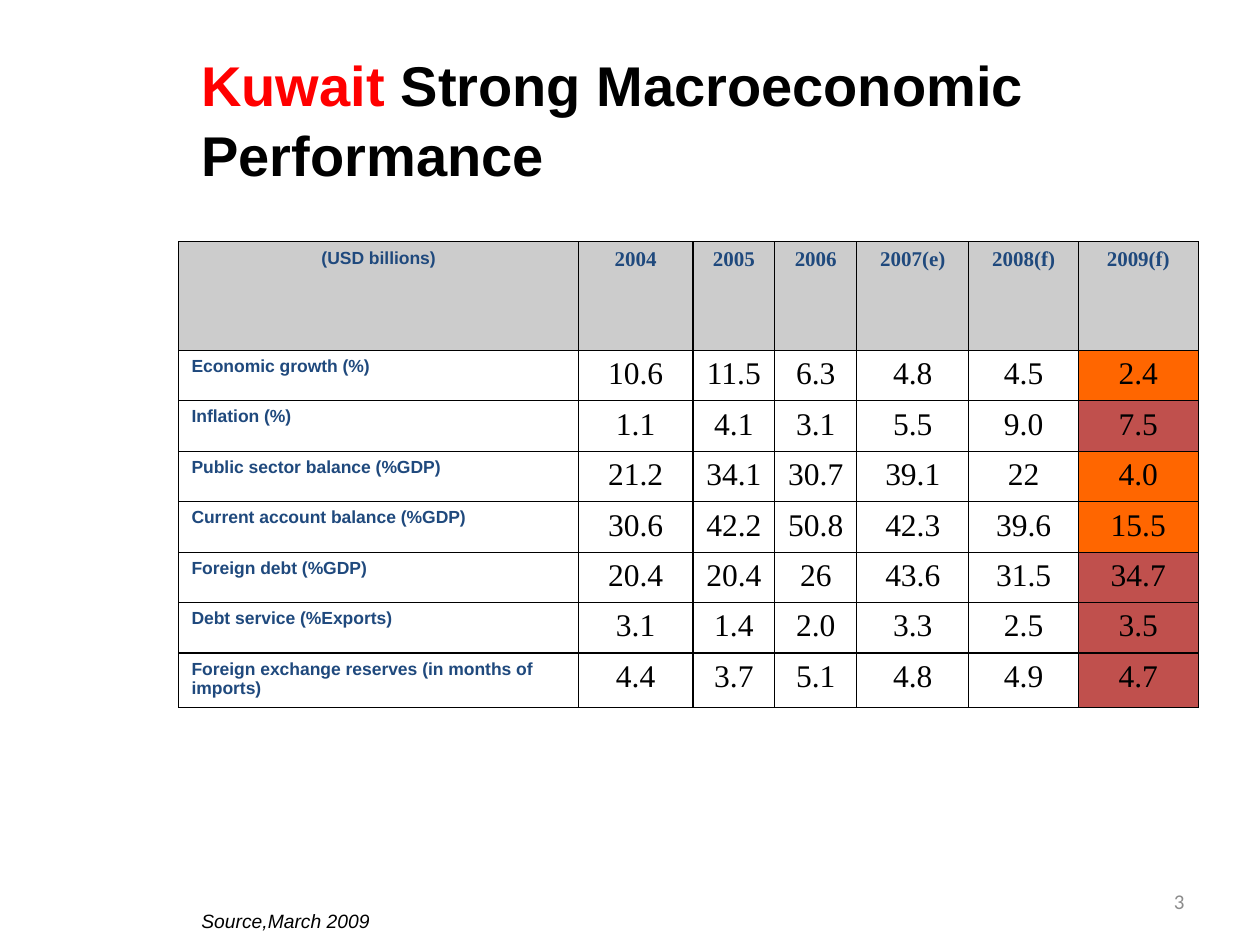
from lxml import etree
from pptx import Presentation
from pptx.dml.color import RGBColor
from pptx.enum.text import MSO_ANCHOR, PP_ALIGN
from pptx.oxml.ns import qn
from pptx.util import Inches, Pt

LEFT, CENTER, RIGHT = PP_ALIGN.LEFT, PP_ALIGN.CENTER, PP_ALIGN.RIGHT
MIDDLE = MSO_ANCHOR.MIDDLE
BLACK = RGBColor(0x00, 0x00, 0x00)
WHITE = RGBColor(0xFF, 0xFF, 0xFF)
RED = RGBColor(0xFF, 0x00, 0x00)
NAVY = RGBColor(0x1F, 0x49, 0x7D)
SILVER = RGBColor(0xCC, 0xCC, 0xCC)
GRAY = RGBColor(0x8C, 0x8C, 0x8C)
ORANGE = RGBColor(0xFF, 0x66, 0x00)
BRICK = RGBColor(0xC0, 0x50, 0x4D)

COLUMN_WIDTHS = [3.17, 0.91, 0.65, 0.65, 0.89, 0.87, 0.95]
HEADER_HEIGHT, ROW_HEIGHT = 0.86, 0.33
YEARS = ["2004", "2005", "2006", "2007(e)", "2008(f)", "2009(f)"]
INDICATORS = [
    ("Economic growth (%)", "10.6 11.5 6.3 4.8 4.5 2.4", ORANGE),
    ("Inflation (%)", "1.1 4.1 3.1 5.5 9.0 7.5", BRICK),
    ("Public sector balance (%GDP)", "21.2 34.1 30.7 39.1 22 4.0", ORANGE),
    ("Current account balance (%GDP)", "30.6 42.2 50.8 42.3 39.6 15.5", ORANGE),
    ("Foreign debt (%GDP)", "20.4 20.4 26 43.6 31.5 34.7", BRICK),
    ("Debt service (%Exports)", "3.1 1.4 2.0 3.3 2.5 3.5", BRICK),
    ("Foreign exchange reserves (in months of imports)", "4.4 3.7 5.1 4.8 4.9 4.7", BRICK),
]


def write(frame, text, size, font="Arial", color=BLACK, bold=False, italic=False, align=LEFT):
    frame.word_wrap = True
    paragraph = frame.paragraphs[0]
    paragraph.alignment = align
    run = paragraph.add_run()
    run.text = text
    run.font.size = Pt(size)
    run.font.name = font
    run.font.color.rgb = color
    run.font.bold = bold
    run.font.italic = italic


def fill_cell(cell, fill, text, **style):
    properties = cell._tc.get_or_add_tcPr()
    for side in ("a:lnL", "a:lnR", "a:lnT", "a:lnB"):
        border = etree.SubElement(properties, qn(side), w=str(Pt(0.75)))
        ink = etree.SubElement(border, qn("a:solidFill"))
        etree.SubElement(ink, qn("a:srgbClr"), val=str(BLACK))
    if fill is None:
        cell.fill.background()
    else:
        cell.fill.solid()
        cell.fill.fore_color.rgb = fill
    write(cell.text_frame, text, **style)


deck = Presentation()
deck.slide_width, deck.slide_height = Inches(10), Inches(7.5)
slide = deck.slides.add_slide(deck.slide_layouts[6])

page_number = slide.shapes.add_textbox(Inches(7.17), Inches(6.95), Inches(2.33), Inches(0.4)).text_frame
page_number.vertical_anchor = MIDDLE
write(page_number, "3", size=12, font="Calibri", color=GRAY, align=RIGHT)

indicators = slide.shapes.add_table(
    len(INDICATORS) + 1, len(COLUMN_WIDTHS), Inches(1.42), Inches(1.92),
    Inches(sum(COLUMN_WIDTHS)), Inches(HEADER_HEIGHT + ROW_HEIGHT * len(INDICATORS))).table
indicators.first_row = indicators.horz_banding = False
for column, width in zip(indicators.columns, COLUMN_WIDTHS):
    column.width = Inches(width)
for row in indicators.rows:
    row.height = Inches(ROW_HEIGHT)
indicators.rows[0].height = Inches(HEADER_HEIGHT)

label_style = dict(size=10, color=NAVY, bold=True)
year_style = dict(size=12, font="Times New Roman", color=NAVY, bold=True, align=CENTER)
value_style = dict(size=18, font="Times New Roman", align=CENTER)

fill_cell(indicators.cell(0, 0), SILVER, "(USD billions)", align=CENTER, **label_style)
for c, year in enumerate(YEARS, 1):
    fill_cell(indicators.cell(0, c), SILVER, year, **year_style)
for r, (label, values, forecast_fill) in enumerate(INDICATORS, 1):
    fill_cell(indicators.cell(r, 0), WHITE, label, **label_style)
    for c, value in enumerate(values.split(), 1):
        fill = forecast_fill if c == len(YEARS) else None
        fill_cell(indicators.cell(r, c), fill, value, **value_style)

title = slide.shapes.add_textbox(Inches(1.5), Inches(0.33), Inches(8), Inches(1.88)).text_frame
write(title, "Kuwait ", size=32, color=RED, bold=True)
write(title, "Strong Macroeconomic Performance", size=32, bold=True)
title.paragraphs[0].line_spacing = 1.04

citation = slide.shapes.add_textbox(Inches(1.5), Inches(7.17), Inches(2), Inches(0.29)).text_frame
write(citation, "Source,March 2009", size=11, italic=True)

deck.save("out.pptx")
